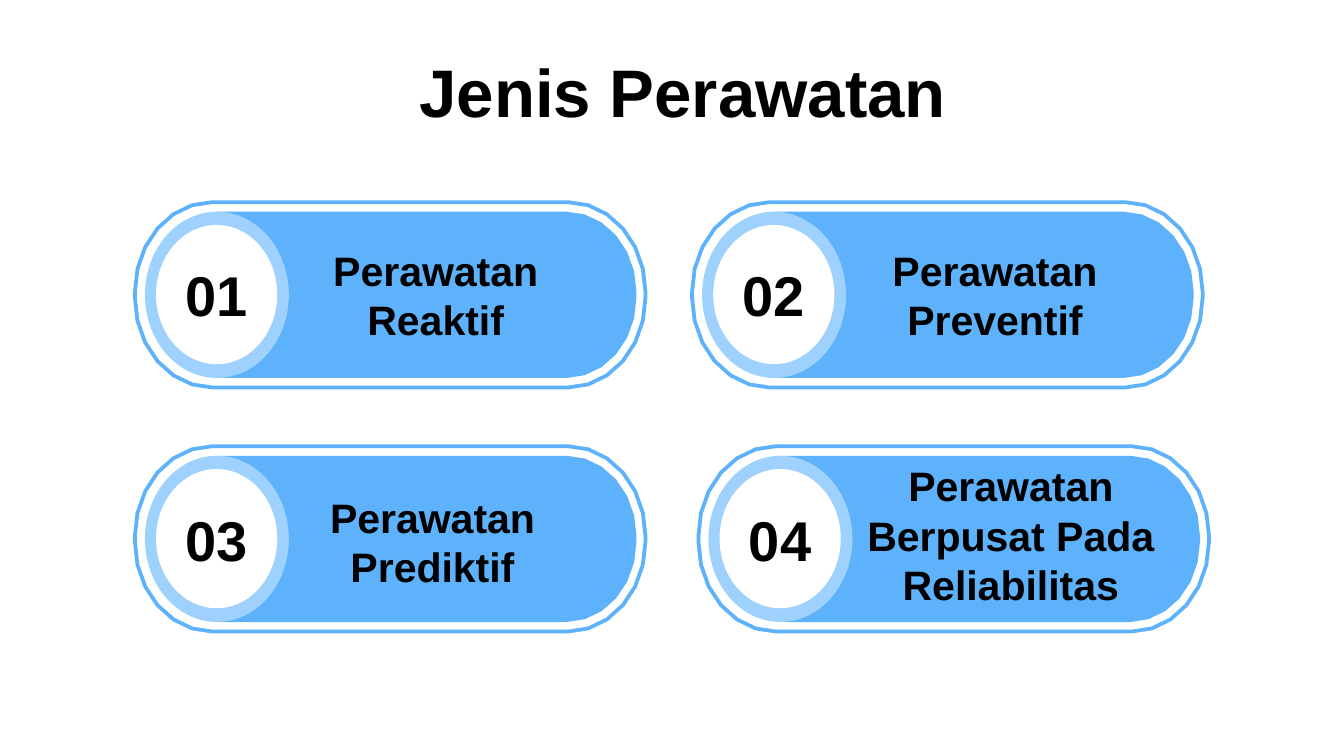
import math
from typing import NamedTuple

import pptx
import pptx.dml.color
import pptx.enum.shapes
import pptx.enum.text
import pptx.util

Cm = pptx.util.Cm
OVAL = pptx.enum.shapes.MSO_SHAPE.OVAL
BLUE, PALE, WHITE, BLACK = "5EB2FC", "9ED1FD", "FFFFFF", "000000"
STEPS = 6


class Box(NamedTuple):
    left: float
    top: float
    width: float
    height: float

    def shift(self, left: float, top: float) -> "Box":
        return self._replace(left=self.left + left, top=self.top + top)

    def lengths(self) -> list:
        return [Cm(value) for value in self]


class Card(NamedTuple):
    number: str
    label: str
    left: float
    top: float
    label_left: float
    label_top: float


RIM = Box(0.04, 0.04, 9.65, 3.5)
BODY = Box(0.3, 0.22, 9.22, 3.14)
CAP = Box(0.23, 0.22, 2.72, 3.14)
DISC = Box(0.44, 0.47, 2.29, 2.63)
LABEL = Box(0, 0, 6.45, 1.24)
CARDS = [
    Card("04", "Perawatan Berpusat Pada Reliabilitas", 13.16, 8.39, 2.72, 1.09),
    Card("01", "Perawatan Reaktif", 2.51, 3.78, 2.5, 1.17),
    Card("02", "Perawatan Preventif", 13.04, 3.78, 2.54, 1.17),
    Card("03", "Perawatan Prediktif", 2.51, 8.39, 2.44, 1.22),
]


def color(tone: str) -> pptx.dml.color.RGBColor:
    return pptx.dml.color.RGBColor.from_string(tone)


def paint(shape, tone: str) -> None:
    shape.shadow.inherit = False
    shape.fill.solid()
    shape.fill.fore_color.rgb = color(tone)
    shape.line.fill.background()


def stroke(shape, tone: str) -> None:
    shape.shadow.inherit = False
    shape.fill.background()
    shape.line.color.rgb = color(tone)
    shape.line.width = pptx.util.Pt(2)


def write(shape, text: str, size: int, inset: float = 0.25) -> None:
    frame = shape.text_frame
    frame.text = text
    frame.word_wrap = True
    frame.auto_size = pptx.enum.text.MSO_AUTO_SIZE.NONE
    frame.vertical_anchor = pptx.enum.text.MSO_ANCHOR.MIDDLE
    frame.margin_left = frame.margin_right = Cm(inset)
    frame.margin_top = frame.margin_bottom = Cm(inset)
    para = frame.paragraphs[0]
    para.alignment = pptx.enum.text.PP_ALIGN.CENTER
    para.font.name = "Arial"
    para.font.size = pptx.util.Pt(size)
    para.font.bold = True
    para.font.color.rgb = color(BLACK)


def pill(shapes, box: Box, curve: float):
    high = box.height / 2 - 0.05
    start, end = box.left + curve, box.left + box.width - curve
    upper, lower = box.top + high, box.top + box.height - high
    hubs = [(end, lower), (start, lower), (start, upper), (end, upper)]
    points = []
    for turn, (x, y) in enumerate(hubs):
        for step in range(STEPS + 1):
            angle = (turn + step / STEPS) * math.pi / 2
            points.append((Cm(x + curve * math.cos(angle)),
                           Cm(y + high * math.sin(angle))))
    pen = shapes.build_freeform(*points[0])
    pen.add_line_segments(points[1:])
    return pen.convert_to_shape()


def draw(slide, card: Card) -> None:
    shapes = slide.shapes.add_group_shape().shapes
    spot = card.left, card.top
    paint(pill(shapes, BODY.shift(*spot), 1.32), BLUE)
    paint(shapes.add_shape(OVAL, *CAP.shift(*spot).lengths()), PALE)
    disc = shapes.add_shape(OVAL, *DISC.shift(*spot).lengths())
    paint(disc, WHITE)
    write(disc, card.number, 30, 0)
    stroke(pill(shapes, RIM.shift(*spot), 1.46), BLUE)
    place = LABEL.shift(*spot).shift(card.label_left, card.label_top)
    write(shapes.add_textbox(*place.lengths()), card.label, 22)


def main() -> None:
    deck = pptx.Presentation()
    deck.slide_width, deck.slide_height = Cm(25.4), Cm(14.28)
    slide = deck.slides.add_slide(deck.slide_layouts[5])
    title = slide.shapes.title
    title.left, title.top, title.width, title.height = Box(
        3.61, 0.91, 18.59, 1.6).lengths()
    write(title, "Jenis Perawatan", 36, 0.13)
    for card in CARDS:
        draw(slide, card)
    deck.save("out.pptx")


if __name__ == "__main__":
    main()
